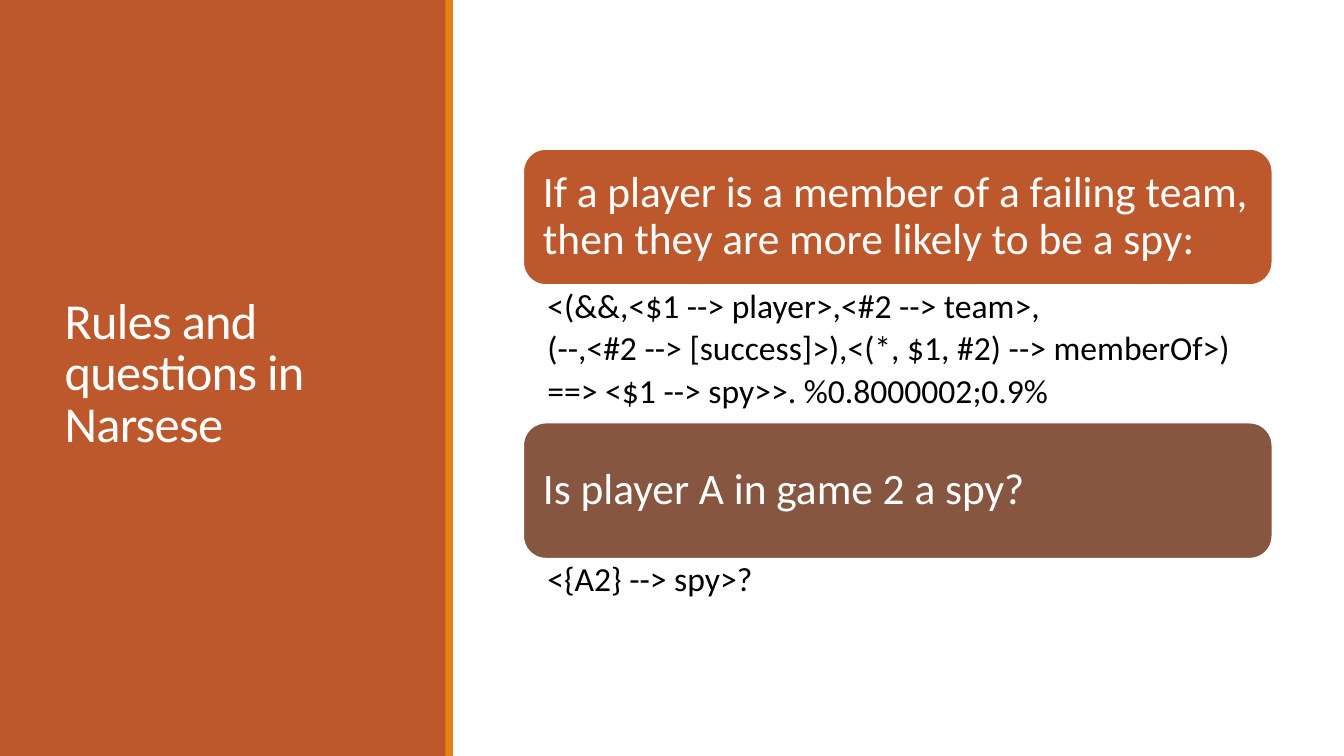
from pptx import Presentation
from pptx import util as u
from pptx.dml.color import RGBColor
from pptx.enum import shapes, text

RUST = RGBColor(0xBD, 0x58, 0x2C)
AMBER = RGBColor(0xE4, 0x83, 0x12)
BROWN = RGBColor(0x86, 0x56, 0x40)
WHITE = RGBColor(0xFF, 0xFF, 0xFF)
BLACK = RGBColor(0, 0, 0)
GRID = 100  # columns and rows on the slide


def write(frame, lines, size, color, lead=0.9, after=0, track=0, pad=(0.1, 0.05),
          anchor=text.MSO_ANCHOR.MIDDLE):
    """Fill a text frame, one paragraph per line."""
    frame.word_wrap = True
    frame.auto_size = text.MSO_AUTO_SIZE.NONE
    frame.vertical_anchor = anchor
    frame.margin_left = frame.margin_right = u.Inches(pad[0])
    frame.margin_top = frame.margin_bottom = u.Inches(pad[1])
    for i, line in enumerate(lines):
        para = frame.paragraphs[0] if i == 0 else frame.add_paragraph()
        para.alignment = text.PP_ALIGN.LEFT
        para.line_spacing = lead
        para.space_before, para.space_after = u.Pt(0), u.Pt(after)
        run = para.add_run()
        run.text = line
        run.font.name, run.font.size = "Calibri", u.Pt(size)
        run.font.color.rgb = color
        if track:
            run.font._element.set("spc", str(track))


class Deck:
    def __init__(self):
        self.prs = Presentation()
        self.prs.slide_width, self.prs.slide_height = u.Inches(13.33), u.Inches(7.5)
        self.slide = self.prs.slides.add_slide(self.prs.slide_layouts[3])

    def area(self, col, row, cols, rows):
        wide, high = self.prs.slide_width / GRID, self.prs.slide_height / GRID
        return int(col * wide), int(row * high), int(cols * wide), int(rows * high)

    def shape(self, kind, box, fill):
        item = self.slide.shapes.add_shape(kind, *self.area(*box))
        item.shadow.inherit = False
        item.fill.solid()
        item.fill.fore_color.rgb = fill
        item.line.fill.background()
        return item

    def band(self, box, fill):
        self.shape(shapes.MSO_SHAPE.RECTANGLE, box, fill)

    def card(self, box, fill, line):
        item = self.shape(shapes.MSO_SHAPE.ROUNDED_RECTANGLE, box, fill)
        item.line.color.rgb = WHITE
        item.line.width = u.Pt(1.25)
        write(item.text_frame, [line], 31, WHITE, pad=(0.13, 0.13))

    def holder(self, idx, box):
        """Place a template placeholder in front of what is drawn so far."""
        item = self.slide.placeholders[idx]
        item.left, item.top, item.width, item.height = self.area(*box)
        self.slide.shapes._spTree.append(item._element)
        return item.text_frame

    def title(self, box, line):
        write(self.holder(0, box), [line], 36, WHITE, lead=0.85, track=-50)

    def code(self, idx, box, lines):
        frame = self.holder(idx, box)
        write(frame, lines, 24, BLACK, after=4.5, pad=(0.24, 0.04),
              anchor=text.MSO_ANCHOR.TOP)
        for para in frame.paragraphs:
            props = para._p.get_or_add_pPr()
            props.set("marL", str(u.Inches(0.25)))
            props.set("indent", str(u.Inches(-0.25)))
            props.append(props.makeelement(
                "{http://schemas.openxmlformats.org/drawingml/2006/main}buNone", {}))


def main():
    deck = Deck()

    # Side panel with the title
    deck.band((0, 0, 33.2, GRID), RUST)
    deck.title((4.05, 7.6, 25.3, 84.1), "Rules and questions in Narsese")
    deck.band((33.15, 0, 0.55, GRID), AMBER)

    # Statements, each with its code below
    parts = [
        (RUST, "If a player is a member of a failing team, then they are more likely to be a spy:",
         18.2, ["<(&&,<$1 --> player>,<#2 --> team>,",
                "(--,<#2 --> [success]>),<(*, $1, #2) --> memberOf>)",
                "==> <$1 --> spy>>. %0.8000002;0.9%"]),
        (BROWN, "Is player A in game 2 a spy?", 7.5, ["<{A2} --> spy>?"]),
    ]
    left, wide, high, top = 38.93, 55.74, 18, 19.7
    for idx, (fill, line, rows, lines) in enumerate(parts, 1):
        deck.card((left, top, wide, high), fill, line)
        deck.code(idx, (left, top + high, wide, rows), lines)
        top += high + rows

    deck.prs.save("out.pptx")


if __name__ == "__main__":
    main()
